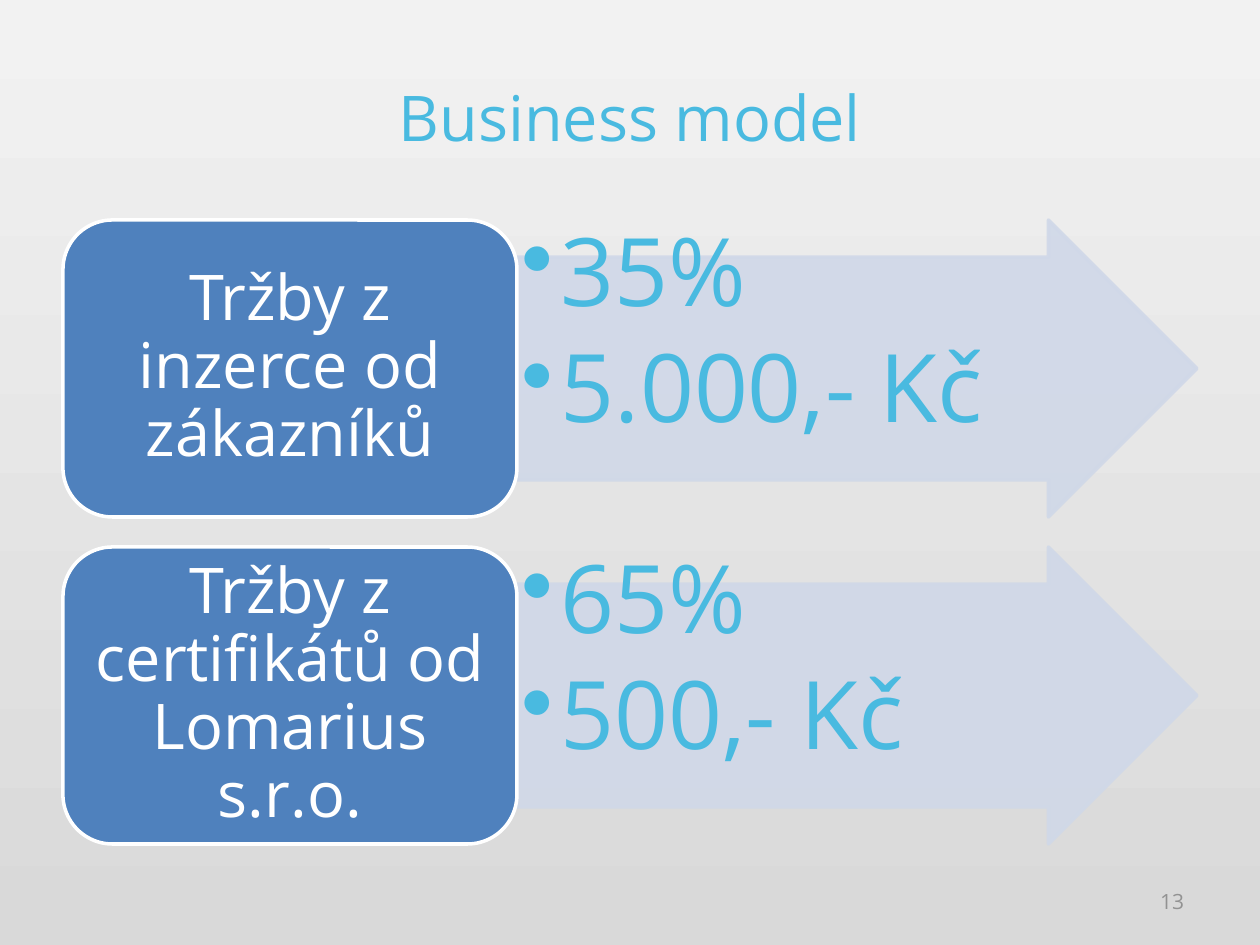
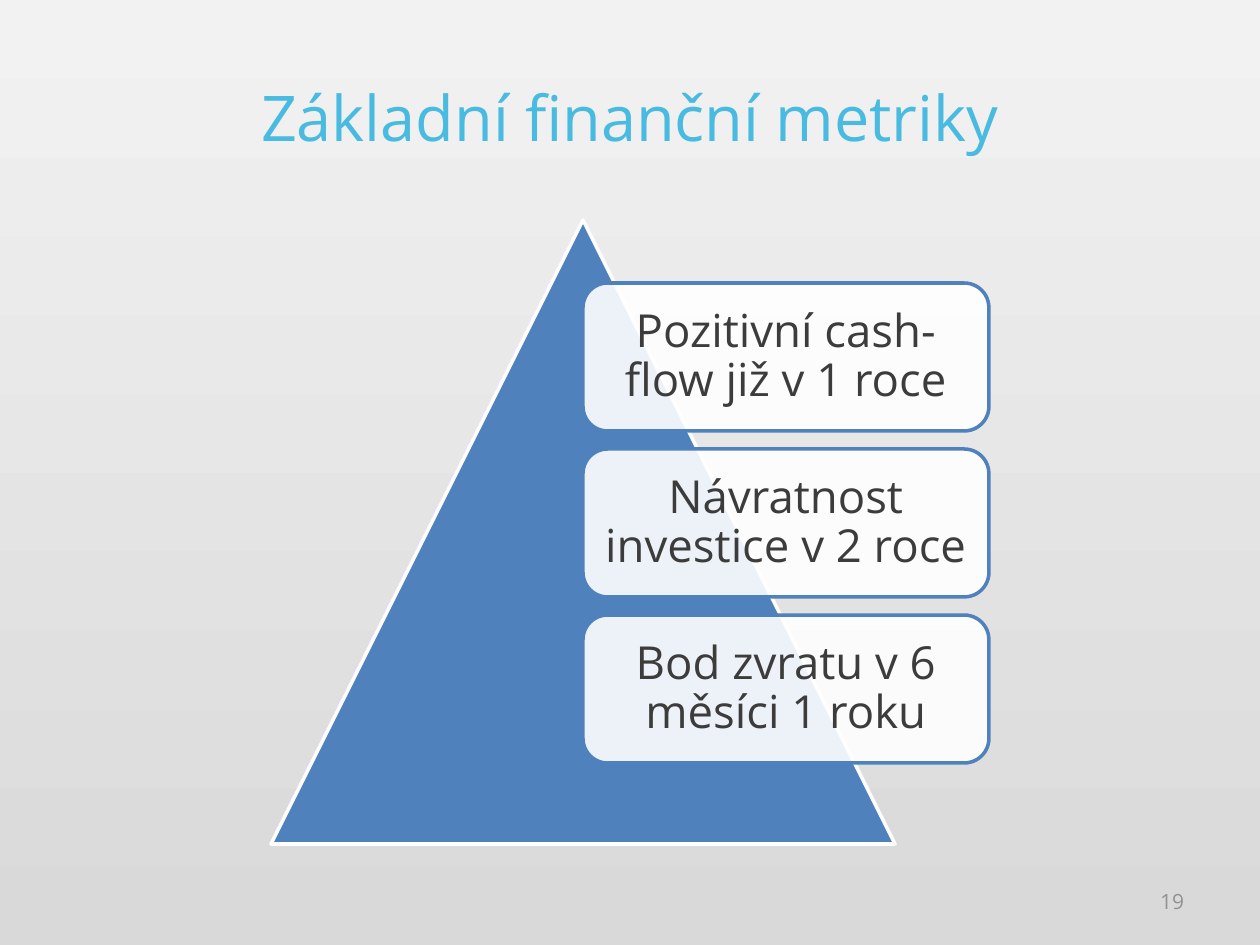
import pptx
import pptx.util
import pptx.dml.color
import pptx.enum.shapes
import pptx.enum.text
import pptx.oxml.ns
import lxml.etree

# Content
REVENUE = {
    "title": "Business model",
    "number": "13",
    "sources": [
        ("Tržby z inzerce od zákazníků", ["35%", "5.000,- Kč"]),
        ("Tržby z certifikátů od Lomarius s.r.o.", ["65%", "500,- Kč"]),
    ],
}
METRICS = {
    "title": "Základní finanční metriky",
    "number": "19",
    "goals": [
        "Pozitivní cash-flow již v 1 roce",
        "Návratnost investice v 2 roce",
        "Bod zvratu v 6 měsíci 1 roku",
    ],
}

# Shared style
COLOURS = {
    "top": "F2F2F2", "bottom": "D9D9D9", "accent": "49BAE0", "blue": "4F81BD",
    "pale": "D0D8E8", "white": "FFFFFF", "dark": "3C3C3C", "grey": "929292",
}
FONT = "Open Sans"
PX_PER_INCH = 126
WIDTH, HEIGHT = 1260, 945
MARGIN, BODY_TOP, BODY_HEIGHT = 63, 220, 624
BODY_WIDTH = WIDTH - 2 * MARGIN

SHAPE = pptx.enum.shapes.MSO_SHAPE
ALIGN = pptx.enum.text.PP_ALIGN
ANCHOR = pptx.enum.text.MSO_ANCHOR
qn = pptx.oxml.ns.qn


def px(length):
    return round(length * pptx.util.Inches(1) / PX_PER_INCH)


def rgb(colour):
    return pptx.dml.color.RGBColor.from_string(COLOURS[colour])


def set_alpha(fill_owner, percent):
    colour = fill_owner.find(qn("a:solidFill")).find(qn("a:srgbClr"))
    lxml.etree.SubElement(colour, qn("a:alpha"), val=str(percent * 1000))


def add_bullet(paragraph, indent):
    properties = paragraph._p.get_or_add_pPr()
    properties.set("marL", str(px(indent)))
    properties.set("indent", str(-px(indent)))
    lxml.etree.SubElement(properties, qn("a:buChar"), char="•")


def write(holder, lines, size, colour, align=ALIGN.CENTER, anchor=ANCHOR.MIDDLE,
          insets=(13, 6), spacing=None, after=0, bullet_indent=None):
    frame = holder.text_frame
    frame.word_wrap = True
    frame.vertical_anchor = anchor
    frame.margin_left = frame.margin_right = px(insets[0])
    frame.margin_top = frame.margin_bottom = px(insets[1])
    for index, line in enumerate(lines):
        paragraph = frame.add_paragraph() if index else frame.paragraphs[0]
        paragraph.alignment = align
        if spacing:
            paragraph.line_spacing = spacing
            paragraph.space_after = pptx.util.Pt(round(size * after, 1))
        if bullet_indent:
            add_bullet(paragraph, bullet_indent)
        run = paragraph.add_run()
        run.text = line
        run.font.name = FONT
        run.font.size = pptx.util.Pt(size)
        run.font.color.rgb = rgb(colour)


def add_text(slide, box, lines, size, colour, **style):
    holder = slide.shapes.add_textbox(*map(px, box))
    write(holder, lines, size, colour, **style)


def add_figure(slide, kind, box, fill, line, fill_alpha=None, line_alpha=None):
    figure = slide.shapes.add_shape(kind, *map(px, box))
    figure.shadow.inherit = False
    figure.fill.solid()
    figure.fill.fore_color.rgb = rgb(fill)
    figure.line.color.rgb = rgb(line)
    figure.line.width = pptx.util.Pt(2)
    properties = figure._element.spPr
    if fill_alpha:
        set_alpha(properties, fill_alpha)
    if line_alpha:
        set_alpha(properties.find(qn("a:ln")), line_alpha)
    return figure


def set_background(deck):
    fill = deck.slide_master.background.fill
    fill.gradient()
    fill.gradient_angle = 270
    for stop, position, colour in zip(fill.gradient_stops, (0, 1), ("top", "bottom")):
        stop.position = position
        stop.color.rgb = rgb(colour)


def add_slide(deck, content):
    slide = deck.slides.add_slide(deck.slide_layouts[6])
    add_text(slide, (MARGIN, 38, BODY_WIDTH, 157), [content["title"]], 36, "accent")
    add_text(slide, (903, 876, 294, 50), [content["number"]], 12, "grey",
             align=ALIGN.RIGHT)
    return slide


def build_revenue(deck):
    slide = add_slide(deck, REVENUE)
    label_width, row_height = 454, 297
    pitch = BODY_HEIGHT - row_height
    for row, (source, figures) in enumerate(REVENUE["sources"]):
        top = BODY_TOP + row * pitch
        arrow_box = (MARGIN + label_width, top, BODY_WIDTH - label_width, row_height)
        arrow = add_figure(slide, SHAPE.RIGHT_ARROW, arrow_box, "pale", "pale", 90, 90)
        arrow.adjustments[0] = 0.75
        arrow.adjustments[1] = 0.5
        add_text(slide, arrow_box, figures, 54, "accent", align=ALIGN.LEFT,
                 anchor=ANCHOR.TOP, insets=(5, 5), spacing=0.9, after=0.15,
                 bullet_indent=39)
        label = add_figure(slide, SHAPE.ROUNDED_RECTANGLE,
                           (MARGIN, top, label_width, row_height), "blue", "white")
        write(label, [source], 36, "white", insets=(5, 0), spacing=0.9, after=0.35)


def build_metrics(deck):
    slide = add_slide(deck, METRICS)
    pyramid_left = 271
    add_figure(slide, SHAPE.ISOSCELES_TRIANGLE,
               (pyramid_left, BODY_TOP, BODY_HEIGHT, BODY_HEIGHT), "blue", "white")
    goal_left = pyramid_left + BODY_HEIGHT // 2
    goal_top, goal_height, gap = 283, 148, 18
    for row, goal in enumerate(METRICS["goals"]):
        top = goal_top + row * (goal_height + gap)
        card = add_figure(slide, SHAPE.ROUNDED_RECTANGLE,
                          (goal_left, top, 406, goal_height), "white", "blue", 90)
        write(card, [goal], 26, "dark", insets=(7, 7), spacing=0.9, after=0.35)


def main():
    deck = pptx.Presentation()
    deck.slide_width, deck.slide_height = px(WIDTH), px(HEIGHT)
    set_background(deck)
    build_revenue(deck)
    build_metrics(deck)
    deck.save("out.pptx")


if __name__ == "__main__":
    main()
